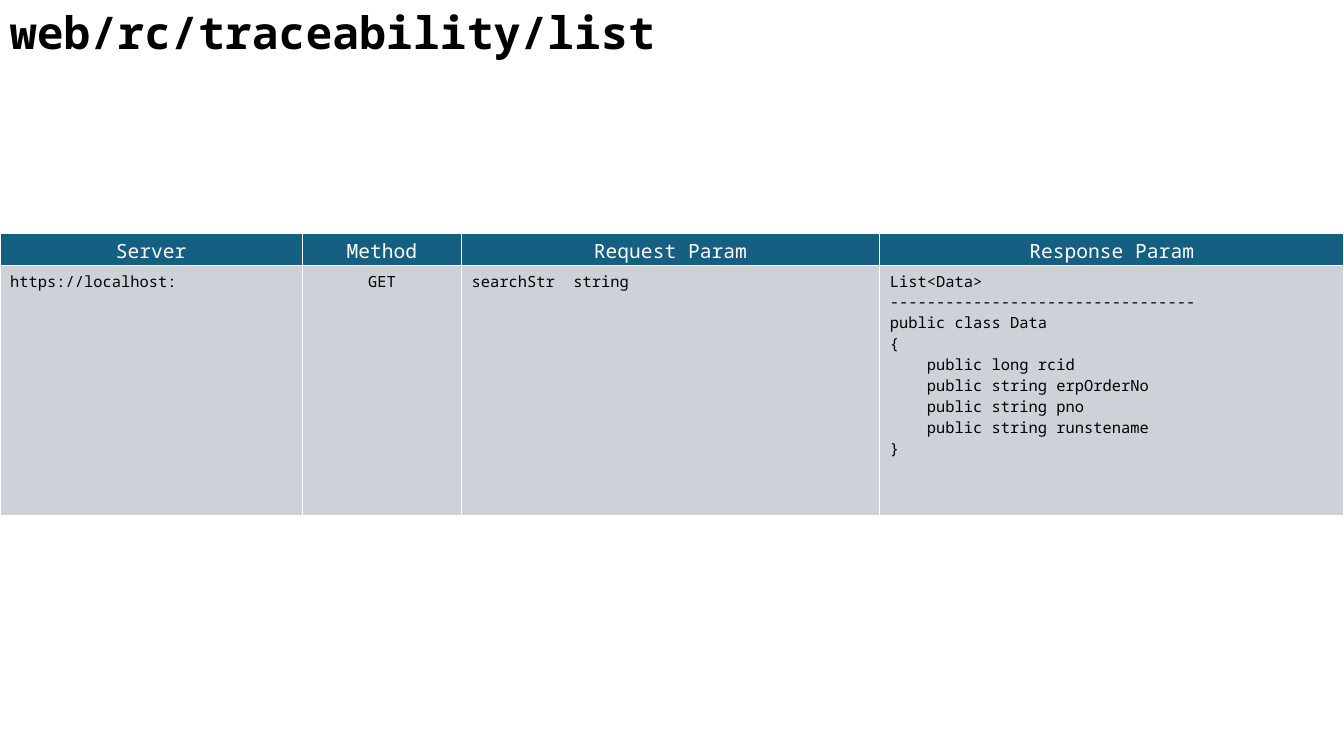
from lxml.etree import SubElement
from pptx import Presentation
from pptx.dml.color import RGBColor
from pptx.enum.text import MSO_AUTO_SIZE, PP_ALIGN
from pptx.oxml.ns import qn
from pptx.util import Cm, Pt

HEADERS = ["Server", "Method", "Request Param", "Response Param"]
RESPONSE = """List<Data>
---------------------------------
public class Data
{
    public long rcid
    public string erpOrderNo
    public string pno
    public string runstename
}"""
VALUES = ["https://localhost:", "GET", "searchStr  string", RESPONSE]
COLUMN_WIDTHS = [7.62, 4.01, 10.54, 11.7]
ROW_HEIGHTS = [0.82, 6.3]


def color(value):
    return RGBColor.from_string(value)


def write(frame, text, size=11, text_color="000000", bold=False, align=PP_ALIGN.LEFT):
    for index, line in enumerate(text.split("\n")):
        paragraph = frame.paragraphs[0] if index == 0 else frame.add_paragraph()
        paragraph.alignment = align
        run = paragraph.add_run()
        run.text = line
        run.font.name = "Noto Sans Mono"
        run.font.size = Pt(size)
        run.font.bold = bold
        run.font.color.rgb = color(text_color)


class ApiSlide:
    """Holds the colours and the slide of one API description."""

    header_fill = "156082"
    body_fill = "CCD2D8"
    white = "FFFFFF"

    def __init__(self, slide):
        self.slide = slide

    def title(self, text, left, top, width, height):
        box = self.slide.shapes.add_textbox(Cm(left), Cm(top), Cm(width), Cm(height))
        box.text_frame.word_wrap = True
        box.text_frame.auto_size = MSO_AUTO_SIZE.SHAPE_TO_FIT_TEXT
        write(box.text_frame, text, size=32, bold=True)

    def borders(self, cell):
        properties = cell._tc.get_or_add_tcPr()
        for position, side in enumerate(("lnL", "lnR", "lnT", "lnB")):
            line = SubElement(properties, qn(f"a:{side}"), w=str(Pt(1)))
            solid = SubElement(line, qn("a:solidFill"))
            SubElement(solid, qn("a:srgbClr"), val=self.white)
            properties.insert(position, line)

    def cell(self, cell, text, fill, **style):
        cell.fill.solid()
        cell.fill.fore_color.rgb = color(fill)
        self.borders(cell)
        write(cell.text_frame, text, **style)

    def table(self, left, top):
        table = self.slide.shapes.add_table(
            len(ROW_HEIGHTS), len(COLUMN_WIDTHS), Cm(left), Cm(top),
            Cm(sum(COLUMN_WIDTHS)), Cm(sum(ROW_HEIGHTS))).table
        for row, height in zip(table.rows, ROW_HEIGHTS):
            row.height = Cm(height)
        for index, width in enumerate(COLUMN_WIDTHS):
            table.columns[index].width = Cm(width)
            header = table.cell(0, index)
            header.margin_bottom = Cm(0)
            self.cell(header, HEADERS[index], self.header_fill,
                      size=14, text_color=self.white, align=PP_ALIGN.CENTER)
            align = PP_ALIGN.CENTER if HEADERS[index] == "Method" else PP_ALIGN.LEFT
            self.cell(table.cell(1, index), VALUES[index], self.body_fill, align=align)


def main():
    presentation = Presentation()
    presentation.slide_width = Cm(33.87)
    presentation.slide_height = Cm(19.05)
    api_slide = ApiSlide(presentation.slides.add_slide(presentation.slide_layouts[6]))
    api_slide.title("web/rc/traceability/list", 0, 0, 24, 1.63)
    api_slide.table(0, 5.87)
    presentation.save("out.pptx")


if __name__ == "__main__":
    main()
